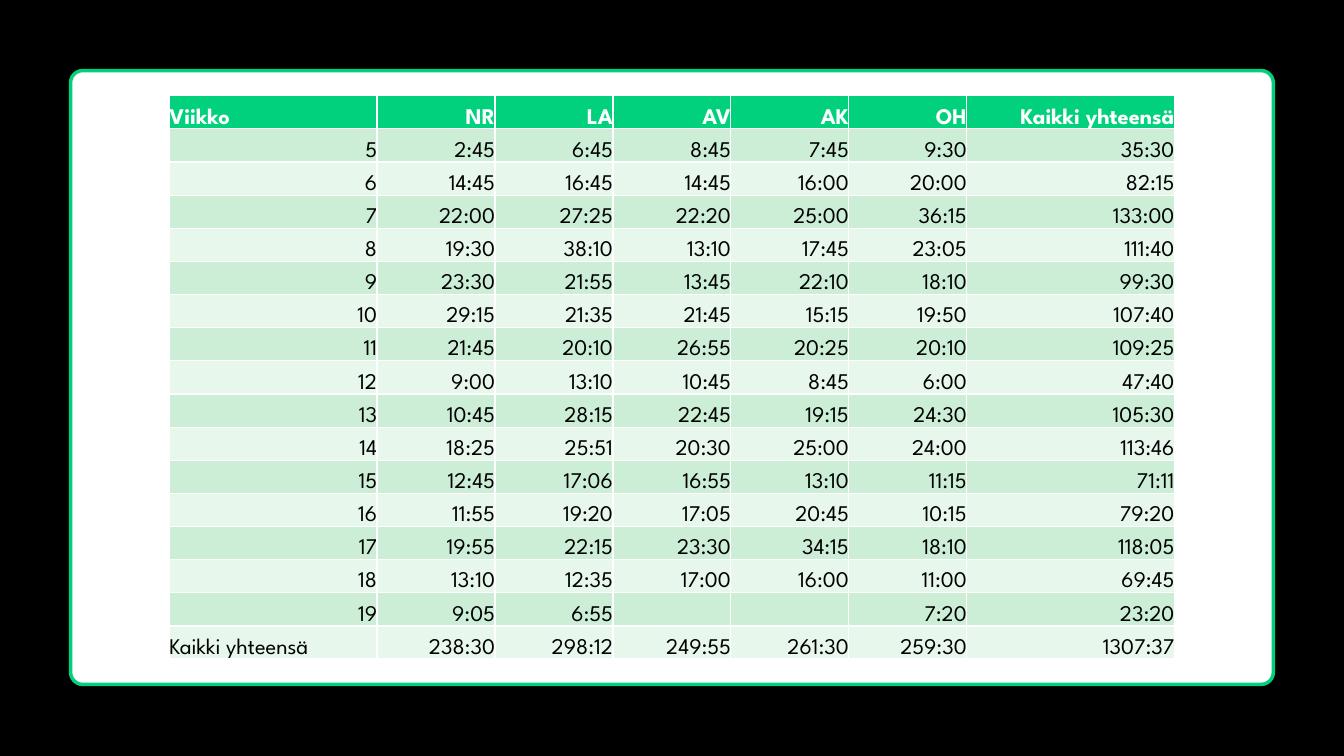
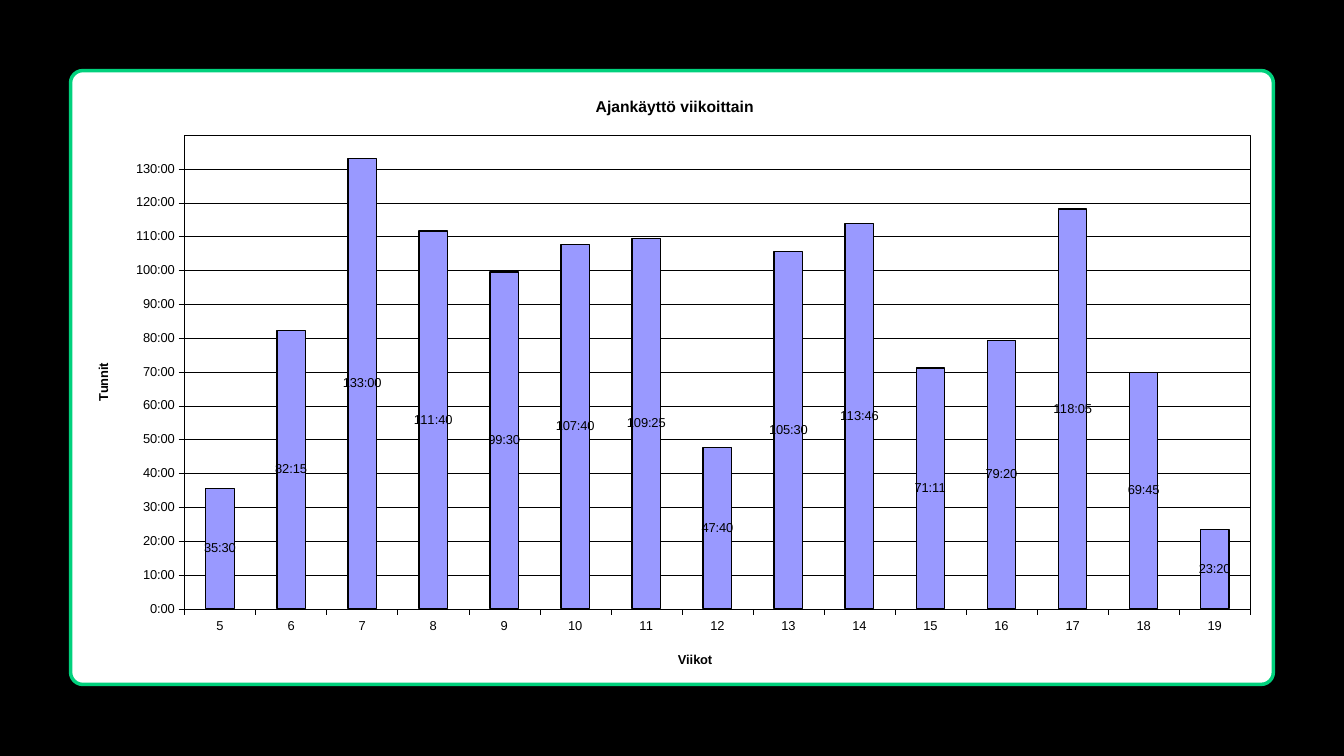
from lxml.etree import SubElement
from pptx import Presentation
from pptx.chart.data import CategoryChartData
from pptx.dml.color import RGBColor
from pptx.enum.chart import XL_CHART_TYPE, XL_LABEL_POSITION, XL_TICK_MARK
from pptx.enum.shapes import MSO_SHAPE
from pptx.enum.text import MSO_ANCHOR, PP_ALIGN
from pptx.oxml import parse_xml
from pptx.oxml.ns import nsdecls, qn
from pptx.util import Pt

PX = 9144  # 100 px to the inch
COLORS = {
    "black": "000000", "white": "FFFFFF", "green": "01D17D",
    "band_dark": "CCEED7", "band_light": "E7F7EC", "bar": "9999FF",
}
RGB = {name: RGBColor.from_string(value) for name, value in COLORS.items()}
TABLE_FONT, CHART_FONT = "League Spartan", "Arial"
HOURS_FORMAT = "[h]:mm"
CARD = (70, 70, 1193, 609)

HEADER = ["Viikko", "NR", "LA", "AV", "AK", "OH", "Kaikki yhteensä"]
WEEKS = [line.split(",") for line in (
    "5,2:45,6:45,8:45,7:45,9:30,35:30",
    "6,14:45,16:45,14:45,16:00,20:00,82:15",
    "7,22:00,27:25,22:20,25:00,36:15,133:00",
    "8,19:30,38:10,13:10,17:45,23:05,111:40",
    "9,23:30,21:55,13:45,22:10,18:10,99:30",
    "10,29:15,21:35,21:45,15:15,19:50,107:40",
    "11,21:45,20:10,26:55,20:25,20:10,109:25",
    "12,9:00,13:10,10:45,8:45,6:00,47:40",
    "13,10:45,28:15,22:45,19:15,24:30,105:30",
    "14,18:25,25:51,20:30,25:00,24:00,113:46",
    "15,12:45,17:06,16:55,13:10,11:15,71:11",
    "16,11:55,19:20,17:05,20:45,10:15,79:20",
    "17,19:55,22:15,23:30,34:15,18:10,118:05",
    "18,13:10,12:35,17:00,16:00,11:00,69:45",
    "19,9:05,6:55,,,7:20,23:20",
)]
TOTALS = ["Kaikki yhteensä", "238:30", "298:12", "249:55", "261:30", "259:30", "1307:37"]


def days(clock):
    """Turn "h:mm" into the fraction of days that HOURS_FORMAT displays."""
    hours, minutes = clock.split(":")
    return round((int(hours) + int(minutes) / 60) / 24, 6)


def place_in_chart(element, **px):
    """Fix a title or the plot area at px measured from the card's corner."""
    layout = element.find(qn("c:layout"))
    if layout is None:
        layout = parse_xml(f"<c:layout {nsdecls('c')}/>")
        element.insert(0, layout)
    manual = SubElement(layout, qn("c:manualLayout"))
    if "w" in px:
        SubElement(manual, qn("c:layoutTarget")).set("val", "inner")
    for side in ("x", "y"):
        SubElement(manual, qn(f"c:{side}Mode")).set("val", "edge")
    for side, length in px.items():
        whole = CARD[2] if side in ("x", "w") else CARD[3]
        SubElement(manual, qn(f"c:{side}")).set("val", str(length / whole))


prs = Presentation()
prs.slide_width, prs.slide_height = 1333 * PX, 750 * PX
backdrop = prs.slide_master.background.fill
backdrop.solid()
backdrop.fore_color.rgb = RGB["black"]

card_box = [length * PX for length in CARD]
for _ in range(2):
    slide = prs.slides.add_slide(prs.slide_layouts[6])
    card = slide.shapes.add_shape(MSO_SHAPE.ROUNDED_RECTANGLE, *card_box)
    card.adjustments[0] = 0.02
    card.shadow.inherit = False
    card.fill.solid()
    card.fill.fore_color.rgb = RGB["white"]
    card.line.color.rgb = RGB["green"]
    card.line.width = Pt(2.5)
table_slide, chart_slide = prs.slides

# Hours per week and person
rows = [HEADER, *WEEKS, TOTALS]
column_widths = [206, *[117] * 5, 206]
table = table_slide.shapes.add_table(
    len(rows), len(HEADER), 168 * PX, 95 * PX, sum(column_widths) * PX, 559 * PX).table
for column, width in zip(table.columns, column_widths):
    column.width = width * PX
for row_index, row in enumerate(rows):
    is_header = row_index == 0
    band = "green" if is_header else "band_dark" if row_index % 2 else "band_light"
    for column_index, text in enumerate(row):
        cell = table.cell(row_index, column_index)
        cell.fill.solid()
        cell.fill.fore_color.rgb = RGB[band]
        cell.vertical_anchor = MSO_ANCHOR.BOTTOM
        cell.margin_left = cell.margin_right = cell.margin_top = cell.margin_bottom = 0
        if not text:
            continue
        paragraph = cell.text_frame.paragraphs[0]
        is_label = column_index == 0 and row in (HEADER, TOTALS)
        paragraph.alignment = PP_ALIGN.LEFT if is_label else PP_ALIGN.RIGHT
        run = paragraph.add_run()
        run.text = text
        run.font.name = TABLE_FONT
        run.font.size = Pt(16)
        run.font.bold = is_header
        run.font.color.rgb = RGB["white" if is_header else "black"]

# Total hours per week
hours = CategoryChartData(number_format=HOURS_FORMAT)
hours.categories = [week[0] for week in WEEKS]
hours.add_series("Tunnit", [days(week[-1]) for week in WEEKS])
chart = chart_slide.shapes.add_chart(XL_CHART_TYPE.COLUMN_STACKED, *card_box, hours).chart
chart.has_legend = False
chart.font.name = CHART_FONT
chart.font.size = Pt(9.2)
chart.font.color.rgb = RGB["black"]

plot = chart.plots[0]
plot.vary_by_categories = False
plot.gap_width = 150
plot.overlap = 100
plot.has_data_labels = True
labels = plot.data_labels
labels.show_value = True
labels.position = XL_LABEL_POSITION.CENTER
labels.number_format = HOURS_FORMAT
labels.number_format_is_linked = False
labels.font.name = CHART_FONT
labels.font.size = Pt(9.2)
labels.font.color.rgb = RGB["black"]
bars = plot.series[0].format
bars.fill.solid()
bars.fill.fore_color.rgb = RGB["bar"]
bars.line.color.rgb = RGB["black"]
bars.line.width = Pt(1)

week_axis, hour_axis = chart.category_axis, chart.value_axis
hour_axis.minimum_scale = 0
hour_axis.maximum_scale = days("140:00")
hour_axis.major_unit = days("10:00")
hour_axis.tick_labels.number_format = HOURS_FORMAT
hour_axis.tick_labels.number_format_is_linked = False
hour_axis.has_major_gridlines = True
for axis in (week_axis, hour_axis):
    axis.major_tick_mark = XL_TICK_MARK.OUTSIDE
for ruled in (week_axis, hour_axis, hour_axis.major_gridlines):
    ruled.format.line.color.rgb = RGB["black"]
    ruled.format.line.width = Pt(0.25)

for heading, text, size, x, y in (
    (chart.chart_title, "Ajankäyttö viikoittain", 11.2, 518, 22),
    (week_axis.axis_title, "Viikot", 9.2, 600, 574),
    (hour_axis.axis_title, "Tunnit", 9.2, 22, 288),
):
    run = heading.text_frame.paragraphs[0].add_run()
    run.text = text
    run.font.name = CHART_FONT
    run.font.size = Pt(size)
    run.font.bold = True
    run.font.color.rgb = RGB["black"]
    place_in_chart(heading._element, x=x, y=y)

plot_area = chart.element.find(f".//{qn('c:plotArea')}")
place_in_chart(plot_area, x=113, y=64, w=1057, h=470)
plot_area.append(parse_xml(
    f'<c:spPr {nsdecls("c", "a")}><a:noFill/><a:ln w="{Pt(0.25)}"><a:solidFill>'
    f'<a:srgbClr val="{COLORS["black"]}"/></a:solidFill></a:ln></c:spPr>'))

prs.save("out.pptx")
